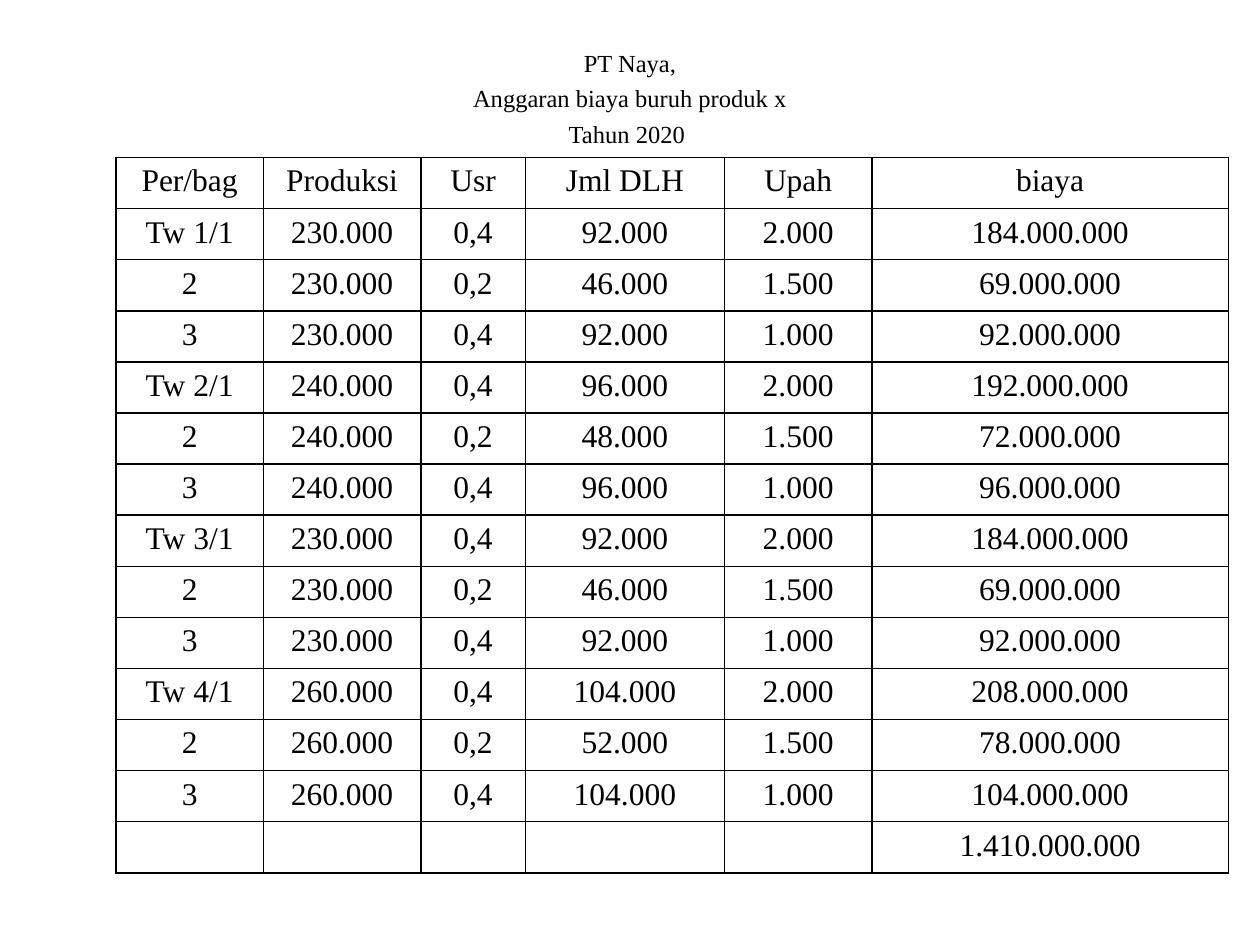
from lxml.etree import SubElement
from pptx import Presentation
from pptx.dml.color import RGBColor
from pptx.enum.text import PP_ALIGN as Align
from pptx.oxml.ns import qn
from pptx.util import Inches, Pt

BLACK = RGBColor(0x00, 0x00, 0x00)
TITLE_LINES = ["PT Naya,", "Anggaran biaya buruh produk x", "Tahun 2020 "]
HEADERS = ["Per/bag", "Produksi", "Usr", "Jml DLH", "Upah", "biaya"]
COLUMN_WIDTHS = [1.17, 1.25, 0.83, 1.58, 1.17, 2.83]
TABLE_HEIGHT = 5.68
QUARTER_UNITS = [230_000, 240_000, 230_000, 260_000]
DEPARTMENTS = [(4, 2_000), (2, 1_500), (4, 1_000)]
TOTAL = "1.410.000.000"


def dotted(number):
    return f"{number:,}".replace(",", ".")


def write(para, text, size):
    para.alignment = Align.CENTER
    span = para.add_run()
    span.text = text
    look = {"name": "Times New Roman", "size": Pt(size)}
    for key, value in look.items():
        setattr(span.font, key, value)
    span.font.color.rgb = BLACK


rows = [HEADERS]
for quarter, units in enumerate(QUARTER_UNITS, 1):
    for department, (tenths, wage) in enumerate(DEPARTMENTS, 1):
        hours = units * tenths // 10
        label = f"Tw {quarter}/1" if department == 1 else str(department)
        rows.append([label, dotted(units), f"0,{tenths}", dotted(hours),
                     dotted(wage), dotted(hours * wage)])
rows.append([""] * 5 + [TOTAL])

deck = Presentation()
deck.slide_width = Inches(10)
deck.slide_height = Inches(7.5)
page = deck.slides.add_slide(deck.slide_layouts[6])

title = page.shapes.add_textbox(Inches(0.5), Inches(0.33), Inches(9), Inches(0.9))
title.text_frame.word_wrap = True
for index, line in enumerate(TITLE_LINES):
    para = title.text_frame.paragraphs[0] if index == 0 else title.text_frame.add_paragraph()
    para.space_before = Pt(3.5)
    write(para, line, 14)

table = page.shapes.add_table(
    len(rows), len(HEADERS), Inches(0.92), Inches(1.25),
    Inches(sum(COLUMN_WIDTHS)), Inches(TABLE_HEIGHT)).table
for flag, value in {"first_row": False, "horz_banding": False}.items():
    setattr(table, flag, value)
for column, width in zip(table.columns, COLUMN_WIDTHS):
    column.width = Inches(width)

for row, texts in zip(table.rows, rows):
    row.height = Inches(TABLE_HEIGHT / len(rows))
    for cell, text in zip(row.cells, texts):
        properties = cell._tc.get_or_add_tcPr()
        for side in ("a:lnL", "a:lnR", "a:lnT", "a:lnB"):
            border = SubElement(properties, qn(side), w=str(Pt(1)))
            fill = SubElement(border, qn("a:solidFill"))
            SubElement(fill, qn("a:srgbClr"), val=str(BLACK))
        cell.fill.background()
        if text:
            write(cell.text_frame.paragraphs[0], text, 18)

deck.save("out.pptx")
